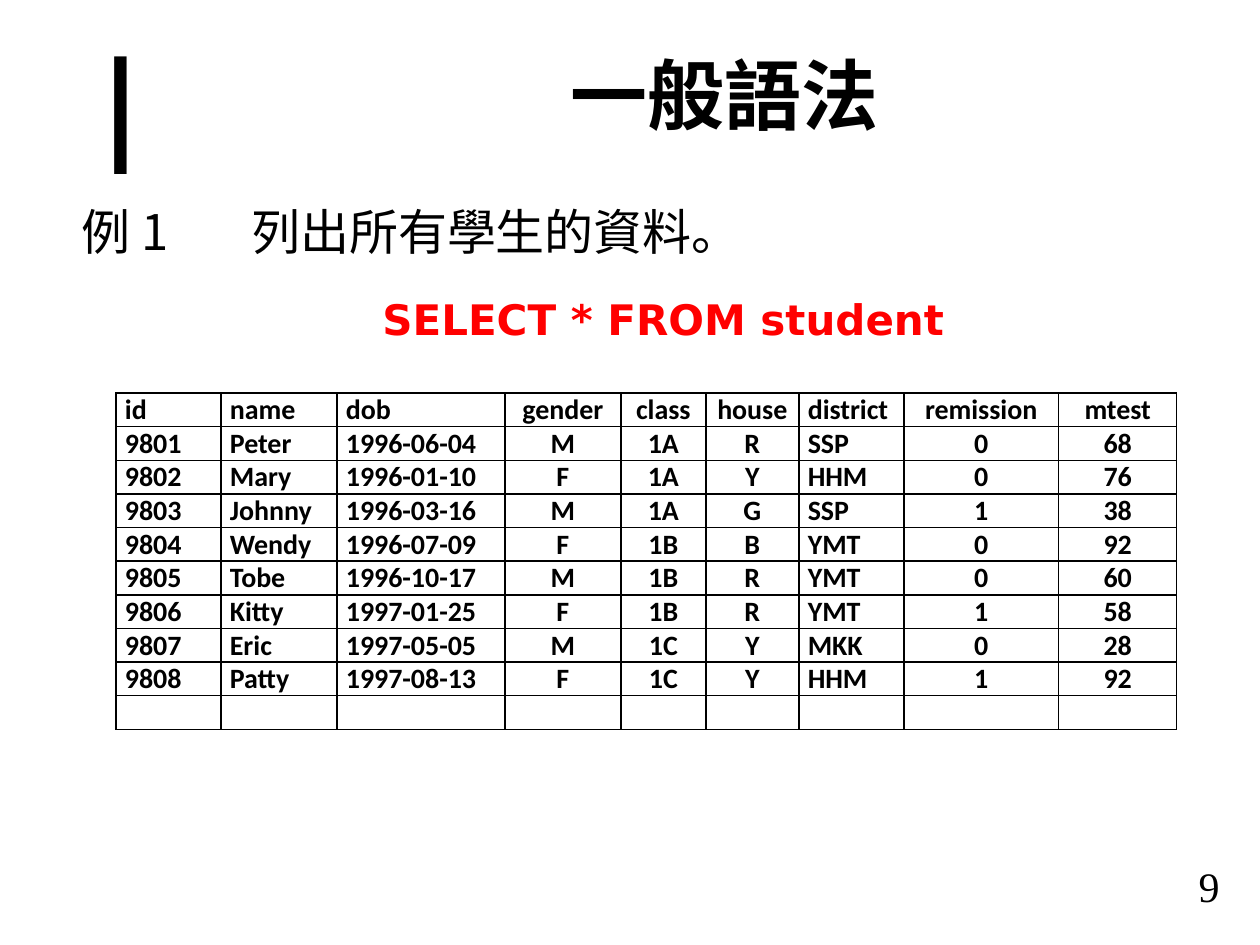
from lxml import etree
from pptx import Presentation, util as u
from pptx.dml.color import RGBColor
from pptx.enum import text
from pptx.oxml.ns import qn

BLACK = RGBColor(0, 0, 0)
RED = RGBColor(255, 0, 0)
LEFT, CENTER, RIGHT = text.PP_ALIGN.LEFT, text.PP_ALIGN.CENTER, text.PP_ALIGN.RIGHT
TOP, MIDDLE, BOTTOM = text.MSO_ANCHOR.TOP, text.MSO_ANCHOR.MIDDLE, text.MSO_ANCHOR.BOTTOM
PX = u.Inches(1) // 126

# Content: words, box in px, format
TEXTS = [
    dict(words="一般語法", box=(189, 42, 1071, 104), size=44, face="Arial",
         align=CENTER, anchor=BOTTOM, bold=True),
    dict(words="I", box=(42, 0, 158, 214), size=96, face="Montserrat",
         align=CENTER, before=50),
    dict(words="例 1\t列出所有學生的資料。", box=(30, 195, 958, 101), size=28,
         face="Noto Sans CJK JP", before=20, margin=209, indent=-170),
    dict(words="SELECT * FROM student", box=(161, 287, 979, 92), size=24,
         face="DejaVu Sans", color=RED, bold=True, before=20, margin=209),
    dict(words="9", box=(970, 854, 262, 63), size=24, face="Times New Roman",
         align=RIGHT, anchor=MIDDLE, wrap=False),
]

# Student table: heading, width in px, alignment
COLUMNS = [
    ("id", 105, LEFT), ("name", 116, LEFT), ("dob", 168, LEFT),
    ("gender", 116, CENTER), ("class", 85, CENTER), ("house", 93, CENTER),
    ("district", 105, LEFT), ("remission", 155, CENTER), ("mtest", 118, CENTER),
]
STUDENTS = [
    ("9801", "Peter", "1996-06-04", "M", "1A", "R", "SSP", "0", "68"),
    ("9802", "Mary", "1996-01-10", "F", "1A", "Y", "HHM", "0", "76"),
    ("9803", "Johnny", "1996-03-16", "M", "1A", "G", "SSP", "1", "38"),
    ("9804", "Wendy", "1996-07-09", "F", "1B", "B", "YMT", "0", "92"),
    ("9805", "Tobe", "1996-10-17", "M", "1B", "R", "YMT", "0", "60"),
    ("9806", "Kitty", "1997-01-25", "F", "1B", "R", "YMT", "1", "58"),
    ("9807", "Eric", "1997-05-05", "M", "1C", "Y", "MKK", "0", "28"),
    ("9808", "Patty", "1997-08-13", "F", "1C", "Y", "HHM", "1", "92"),
]
TABLE_LEFT, TABLE_TOP, TABLE_HEIGHT = 116, 393, 336


def style(paragraph, size, face, color=BLACK, bold=False, align=LEFT):
    paragraph.alignment = align
    for run in paragraph.runs:
        font = run.font
        font.size, font.name, font.bold = u.Pt(size), face, bold
        font.color.rgb = color
        etree.SubElement(font._element, qn("a:ea"), typeface=face)


def add_text(slide, words, box, size, face, color=BLACK, bold=False, align=LEFT,
             anchor=TOP, wrap=True, before=0, margin=0, indent=0):
    frame = slide.shapes.add_textbox(*(v * PX for v in box)).text_frame
    frame.word_wrap, frame.vertical_anchor = wrap, anchor
    paragraph = frame.paragraphs[0]
    paragraph.text = words
    style(paragraph, size, face, color, bold, align)
    layout = paragraph._p.get_or_add_pPr()
    layout.set("marL", str(margin * PX))
    layout.set("indent", str(indent * PX))
    if before:
        space = etree.SubElement(layout, qn("a:spcBef"))
        etree.SubElement(space, qn("a:spcPct"), val=str(before * 1000))


def add_borders(cell):
    properties = cell._tc.get_or_add_tcPr()
    for position, side in enumerate(("lnL", "lnR", "lnT", "lnB")):
        line = etree.Element(qn("a:" + side), w=str(u.Pt(1)))
        fill = etree.SubElement(line, qn("a:solidFill"))
        etree.SubElement(fill, qn("a:srgbClr"), val=str(BLACK))
        properties.insert(position, line)


def add_student_table(slide):
    headings, widths, aligns = zip(*COLUMNS)
    rows = [headings, *STUDENTS, ("",) * len(COLUMNS)]
    table = slide.shapes.add_table(
        len(rows), len(COLUMNS), TABLE_LEFT * PX, TABLE_TOP * PX,
        sum(widths) * PX, TABLE_HEIGHT * PX).table
    table.first_row = table.horz_banding = False
    for column, width in zip(table.columns, widths):
        column.width = width * PX
    for r, row in enumerate(rows):
        for c, value in enumerate(row):
            cell = table.cell(r, c)
            cell.fill.background()
            cell.margin_left = cell.margin_right = 9 * PX
            cell.margin_top = cell.margin_bottom = 0
            paragraph = cell.text_frame.paragraphs[0]
            if value:
                paragraph.text = value
            else:
                etree.SubElement(paragraph._p, qn("a:endParaRPr"), sz="1600")
            style(paragraph, 16, "Calibri", bold=True, align=aligns[c])
            add_borders(cell)


def main():
    deck = Presentation()
    deck.slide_width, deck.slide_height = 1260 * PX, 945 * PX
    slide = deck.slides.add_slide(deck.slide_layouts[6])
    *body, page_number = TEXTS
    for item in body:
        add_text(slide, **item)
    add_student_table(slide)
    add_text(slide, **page_number)
    deck.save("out.pptx")


if __name__ == "__main__":
    main()
